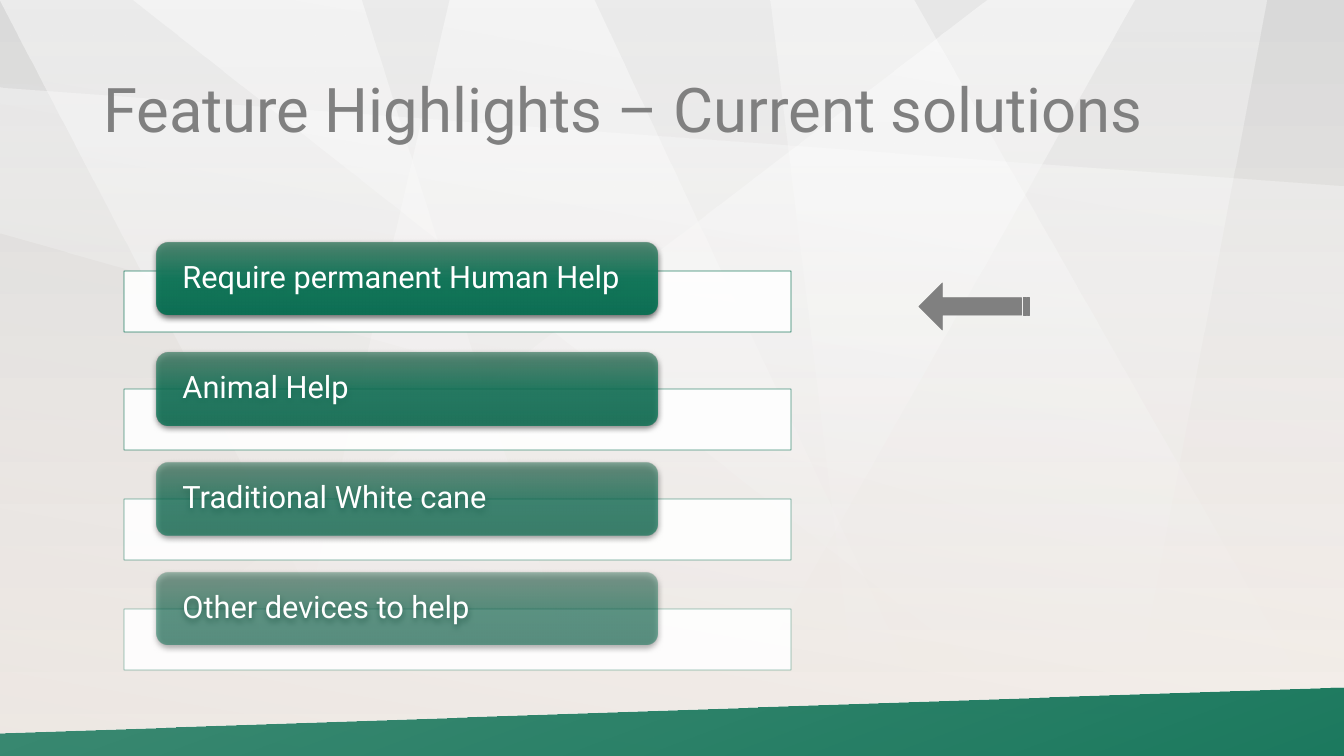
"""Build the slide that lists the current solutions on a faceted backdrop."""
from dataclasses import dataclass

from lxml import etree
from pptx import Presentation
from pptx import util as u
from pptx.dml import color as dml_color
from pptx.dml import fill as dml_fill
from pptx.enum import shapes, text
from pptx.oxml import ns
from pptx.shapes import autoshape
from pptx.slide import Slide
from pptx.text import text as pptx_text

EMU_PER_PX = 914400 / 100.8
WIDTH, HEIGHT = 1344, 756
FONT = "Roboto"
GREEN, GRAY, WHITE = "107357", "808080", "FFFFFF"
ROW_TOP, ROW_PITCH = 243, 110


@dataclass(frozen=True)
class Stop:
    position: int
    color: str
    alpha: float = 100


@dataclass(frozen=True)
class Facet:
    points: tuple[tuple[int, int], ...]
    stops: tuple[Stop, ...]
    angle: int = 90


@dataclass(frozen=True)
class Solution:
    label: str
    alpha: int
    frame_drop: int = 36


def glow(alpha: int) -> tuple[Stop, ...]:
    return Stop(0, WHITE, alpha), Stop(100, WHITE, 0)


FACETS = (
    Facet(((987, 0), (0, 756), (707, 756), (1134, 0)), glow(50)),
    Facet(((0, 0), (361, 0), (599, 756), (394, 756)), glow(50)),
    Facet(((133, 0), (914, 0), (1344, 756), (1092, 756)), glow(50)),
    Facet(((771, 0), (863, 756), (1124, 756), (1267, 0)), glow(40)),
    Facet(((594, 0), (450, 0), (274, 756), (947, 756)), glow(50)),
    Facet(((0, 88), (1344, 187), (1344, 615), (0, 234)), glow(40)),
    Facet(((0, 0), (1344, 0), (1344, 756), (0, 756)),
          (Stop(0, "BFBFBF", 25), Stop(100, WHITE, 0)), 280),
    Facet(((0, 733), (1344, 688), (1344, 756), (0, 756)),
          (Stop(0, GREEN, 80), Stop(100, GREEN, 95)), 70),
)
SOLUTIONS = (
    Solution("Require permanent Human Help", 90, 28),
    Solution("Animal Help", 77),
    Solution("Traditional White cane", 63),
    Solution("Other devices to help", 50),
)


def px(length: float) -> u.Emu:
    return u.Emu(round(length * EMU_PER_PX))


def rgb(value: str) -> dml_color.RGBColor:
    return dml_color.RGBColor.from_string(value)


def add_child(parent: etree._Element, tag: str, **attributes: object) -> etree._Element:
    values = {name: str(value) for name, value in attributes.items()}
    return etree.SubElement(parent, ns.qn(tag), values)


def add_color(parent: etree._Element, color: str, alpha: float) -> None:
    add_child(add_child(parent, "a:srgbClr", val=color), "a:alpha", val=round(alpha * 1000))


def set_solid(fill: dml_fill.FillFormat, element: etree._Element, color: str, alpha: float = 100) -> None:
    fill.solid()
    fill.fore_color.rgb = rgb(color)
    add_child(element.find(".//" + ns.qn("a:srgbClr")), "a:alpha", val=round(alpha * 1000))


def set_gradient(fill: dml_fill.FillFormat, element: etree._Element,
                 stops: tuple[Stop, ...], angle: int = 90) -> None:
    fill.gradient()
    gradient = element.find(".//" + ns.qn("a:gradFill"))
    for child in list(gradient):
        gradient.remove(child)
    stop_list = add_child(gradient, "a:gsLst")
    for stop in stops:
        add_color(add_child(stop_list, "a:gs", pos=stop.position * 1000), stop.color, stop.alpha)
    add_child(gradient, "a:lin", ang=angle * 60000, scaled=0)


def set_line(shape: autoshape.Shape, color: str, alpha: int = 100) -> None:
    shape.line.width = u.Pt(0.5)
    set_solid(shape.line.fill, shape.element.find(".//" + ns.qn("a:ln")), color, alpha)


def add_box(page: Slide, kind: shapes.MSO_SHAPE, left: int, top: int, width: int, height: int) -> autoshape.Shape:
    box = page.shapes.add_shape(kind, px(left), px(top), px(width), px(height))
    box.shadow.inherit = False
    return box


def write(para: pptx_text._Paragraph, words: str, size: int, color: str) -> None:
    para.alignment = text.PP_ALIGN.LEFT
    para.line_spacing = 0.9
    span = para.add_run()
    span.text = words
    span.font.name = FONT
    span.font.size = u.Pt(size)
    span.font.color.rgb = rgb(color)


def add_facet(page: Slide, facet: Facet) -> None:
    first, *rest = facet.points
    builder = page.shapes.build_freeform(*first, scale=EMU_PER_PX)
    builder.add_line_segments(rest, close=True)
    shape = builder.convert_to_shape()
    shape.shadow.inherit = False
    shape.line.fill.background()
    set_gradient(shape.fill, shape.element, facet.stops, facet.angle)


def add_title(page: Slide) -> None:
    title = page.shapes.title
    title.element.getparent().append(title.element)
    title.left, title.top, title.width, title.height = px(93), px(40), px(1159), px(146)
    frame = title.text_frame
    frame.auto_size = text.MSO_AUTO_SIZE.NONE
    frame.vertical_anchor = text.MSO_ANCHOR.MIDDLE
    write(frame.paragraphs[0], "Feature Highlights – Current solutions", 44, GRAY)


def add_solution(page: Slide, solution: Solution, top: int) -> None:
    frame = add_box(page, shapes.MSO_SHAPE.RECTANGLE, 124, top + solution.frame_drop, 667, 61)
    set_solid(frame.fill, frame.element, WHITE, 90)
    set_line(frame, GREEN, solution.alpha)

    card = add_box(page, shapes.MSO_SHAPE.ROUNDED_RECTANGLE, 157, top, 500, 72)
    card.line.fill.background()
    colors = ((0, "4C856E"), (50, "0B7859"), (100, "056F51"))
    set_gradient(card.fill, card.element, tuple(Stop(*pair, solution.alpha) for pair in colors))
    shadow = add_child(card.element.find(".//" + ns.qn("a:effectLst")), "a:outerShdw",
                       blurRad=u.Pt(4.5), dist=u.Pt(1.5), dir=90 * 60000, rotWithShape=0)
    add_color(shadow, "000000", 63)
    words = card.text_frame
    words.word_wrap = True
    words.vertical_anchor = text.MSO_ANCHOR.MIDDLE
    words.margin_left = words.margin_right = px(22)
    words.margin_top = words.margin_bottom = 0
    write(words.paragraphs[0], solution.label, 22, WHITE)


def add_arrow(page: Slide) -> None:
    arrow = add_box(page, shapes.MSO_SHAPE.STRIPED_RIGHT_ARROW, 919, 283, 110, 47)
    arrow.adjustments[0] = 0.37
    arrow.adjustments[1] = 0.5
    arrow.element.find(".//" + ns.qn("a:xfrm")).set("flipH", "1")
    set_solid(arrow.fill, arrow.element, GRAY)
    set_line(arrow, GRAY)


def main() -> None:
    deck = Presentation()
    deck.slide_width, deck.slide_height = px(WIDTH), px(HEIGHT)
    page = deck.slides.add_slide(deck.slide_layouts[5])
    set_gradient(page.background.fill, page.element, (Stop(0, "D9D9D9", 50), Stop(100, "FCF5EF")))
    for facet in FACETS:
        add_facet(page, facet)
    add_title(page)
    for row, solution in enumerate(SOLUTIONS):
        add_solution(page, solution, ROW_TOP + row * ROW_PITCH)
    add_arrow(page)
    deck.save("out.pptx")


if __name__ == "__main__":
    main()
